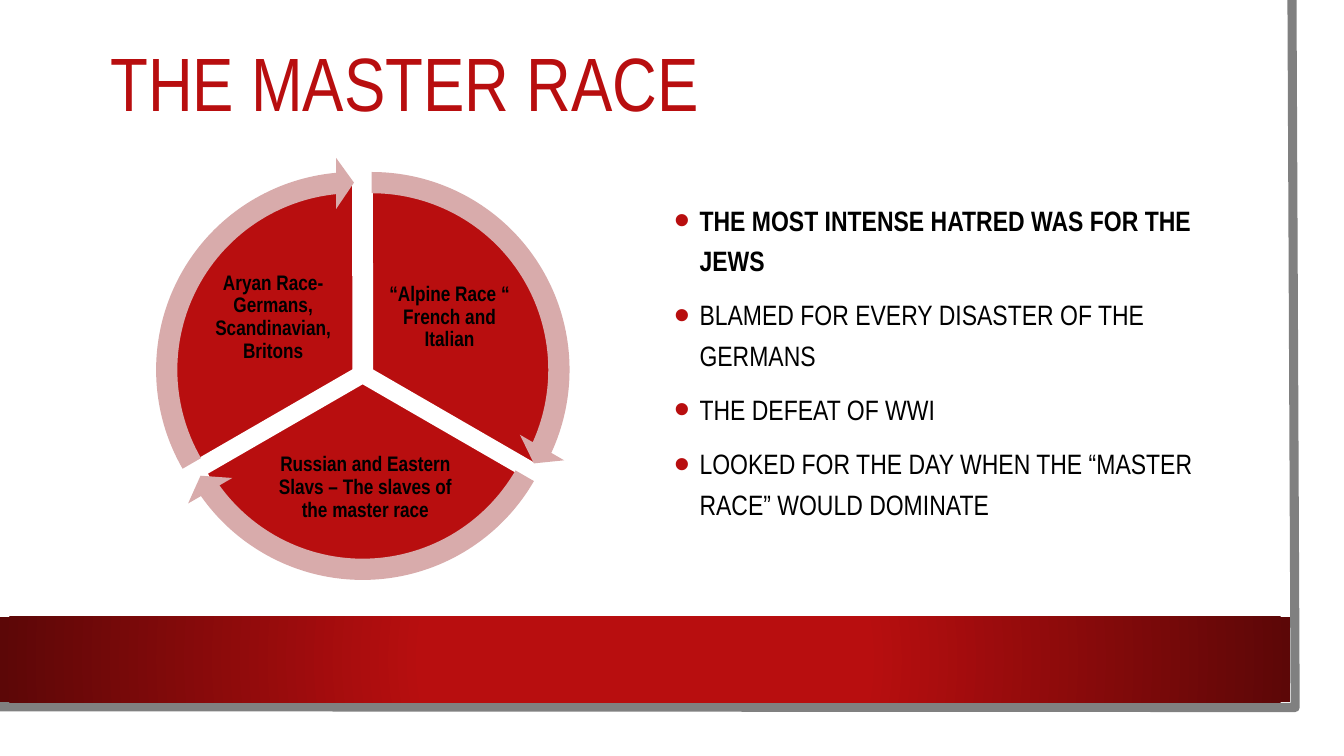
"""Build the slide with a three-part cycle diagram and a bulleted list."""
import pptx
import pptx.dml.color
import pptx.enum.shapes
import pptx.enum.text
import pptx.util
from lxml import etree

Cm = pptx.util.Cm
Pt = pptx.util.Pt
SHAPES = pptx.enum.shapes.MSO_SHAPE
ALIGN = pptx.enum.text.PP_ALIGN
ANCHOR = pptx.enum.text.MSO_ANCHOR
DRAWING = "http://schemas.openxmlformats.org/drawingml/2006/main"

FONT = "Arial Narrow"
RED, DARK_RED, PINK = "B80E0F", "5C0707", "D8ABAB"
WHITE, BLACK, GRAY = "FFFFFF", "000000", "808080"

TITLE = "THE MASTER RACE"
BULLETS = [
    ("THE MOST INTENSE HATRED WAS FOR THE JEWS", True),
    ("BLAMED FOR EVERY DISASTER OF THE GERMANS", False),
    ("THE DEFEAT OF WWI", False),
    ("LOOKED FOR THE DAY WHEN THE “MASTER RACE” WOULD DOMINATE", False),
]
SECTORS = [
    {"text": "“Alpine Race “ French and Italian",
     "pie": (4.6, 4.55, 9.55, 9.55), "angles": (162, 18),
     "label": (9.63, 6.58, 3.4, 2.84),
     "arrow": (4.01, 3.96), "sweep": (14.72, 161.99)},
    {"text": "Russian and Eastern Slavs – The slaves of the master race",
     "pie": (4.67, 4.88, 8.94, 9.55), "angles": (18, 90),
     "label": (6.81, 11.05, 4.8, 2.49),
     "arrow": (3.78, 4.27), "sweep": (86.72, 18.01)},
    {"text": "Aryan Race- Germans, Scandinavian, Britons",
     "pie": (3.99, 4.55, 9.83, 9.55), "angles": (90, 162),
     "label": (5.13, 6.58, 3.51, 2.84),
     "arrow": (3.56, 3.96), "sweep": (158.73, 90)},
]
ARROW_SIZE = 10.72
ARROW_THICKNESS, ARROW_HEAD_ANGLE, ARROW_HEAD_WIDTH = 0.05, 3.28, 0.06
FRAME = [(32.56, 0), (32.64, 17.83), (-0.08, 17.81)]


def color(value):
    return pptx.dml.color.RGBColor.from_string(value)


def add_xml(parent, name, **attributes):
    element = etree.SubElement(parent, f"{{{DRAWING}}}{name}")
    for key, value in attributes.items():
        element.set(key, str(value))
    return element


def add_shape(slide, kind, box, fill, line=None, adjustments=()):
    shape = slide.shapes.add_shape(kind, *map(Cm, box))
    shape.shadow.inherit = False
    shape.fill.solid()
    shape.fill.fore_color.rgb = color(fill)
    if line:
        shape.line.color.rgb = color(line)
        shape.line.width = Pt(1.5)
    else:
        shape.line.fill.background()
    for index, value in enumerate(adjustments):
        shape.adjustments[index] = value
    return shape


def add_text_box(slide, box, anchor, inset=None):
    frame = slide.shapes.add_textbox(*map(Cm, box)).text_frame
    frame.word_wrap = True
    frame.vertical_anchor = anchor
    if inset is not None:
        frame.margin_left = frame.margin_right = Cm(inset)
        frame.margin_top = frame.margin_bottom = Cm(inset)
    return frame


def write(paragraph, text, size, fill=BLACK, bold=False, align=ALIGN.CENTER,
          spacing=0.9, before=0, bullet=None):
    paragraph.alignment = align
    paragraph.line_spacing = spacing
    paragraph.space_before = Pt(before)
    if bullet:
        properties = paragraph._p.get_or_add_pPr()
        properties.set("marL", str(Cm(0.64)))
        properties.set("indent", str(-Cm(0.64)))
        add_xml(add_xml(properties, "buClr"), "srgbClr", val=RED)
        add_xml(properties, "buSzPct", val=160000)
        add_xml(properties, "buFont", typeface="Arial")
        add_xml(properties, "buChar", char=bullet)
    run = paragraph.add_run()
    run.text = text
    run.font.name = FONT
    run.font.size = Pt(size)
    run.font.bold = bold
    run.font.color.rgb = color(fill)


def add_background(slide):
    add_shape(slide, SHAPES.RECTANGLE, (0, 0, 33.27, 18.47), WHITE)

    points = [(Cm(x), Cm(y)) for x, y in FRAME]
    builder = slide.shapes.build_freeform(*points[0])
    builder.add_line_segments(points[1:], close=False)
    border = builder.convert_to_shape()
    border.shadow.inherit = False
    border.fill.background()
    border.line.color.rgb = color(GRAY)
    border.line.width = Pt(6.5)

    band = add_shape(slide, SHAPES.RECTANGLE, (0, 15.54, 32.51, 2.16), RED)
    band.fill.gradient()
    for stop, position, value in zip(band.fill.gradient_stops, (0.34, 1), (RED, DARK_RED)):
        stop.position = position
        stop.color.rgb = color(value)
    gradient = band._element.spPr.find(f"{{{DRAWING}}}gradFill")
    gradient.remove(gradient.find(f"{{{DRAWING}}}lin"))
    circle = add_xml(gradient, "path", path="circle")
    add_xml(circle, "fillToRect", l=50000, t=50000, r=50000, b=50000)


def add_cycle(slide):
    for sector in SECTORS:
        add_shape(slide, SHAPES.PIE, sector["pie"], RED, WHITE, sector["angles"])
        label = add_text_box(slide, sector["label"], ANCHOR.MIDDLE, 0.05)
        write(label.paragraphs[0], sector["text"], 15, bold=True)
    for sector in SECTORS:
        add_shape(slide, SHAPES.CIRCULAR_ARROW,
                  (*sector["arrow"], ARROW_SIZE, ARROW_SIZE), PINK,
                  adjustments=(ARROW_THICKNESS, ARROW_HEAD_ANGLE,
                               *sector["sweep"], ARROW_HEAD_WIDTH))


def main():
    presentation = pptx.Presentation()
    presentation.slide_width = Cm(33.87)
    presentation.slide_height = Cm(19.05)
    slide = presentation.slides.add_slide(presentation.slide_layouts[6])

    add_background(slide)
    title = add_text_box(slide, (-4.24, 0.58, 28.88, 3.23), ANCHOR.MIDDLE)
    write(title.paragraphs[0], TITLE, 54, fill=RED)

    body = add_text_box(slide, (16.74, 4.83, 13.77, 9.35), ANCHOR.TOP)
    for index, (text, bold) in enumerate(BULLETS):
        paragraph = body.add_paragraph() if index else body.paragraphs[0]
        write(paragraph, text, 20, bold=bold, align=ALIGN.LEFT, spacing=1.2,
              before=10 if index else 0, bullet="•")

    add_cycle(slide)
    presentation.save("out.pptx")


if __name__ == "__main__":
    main()
